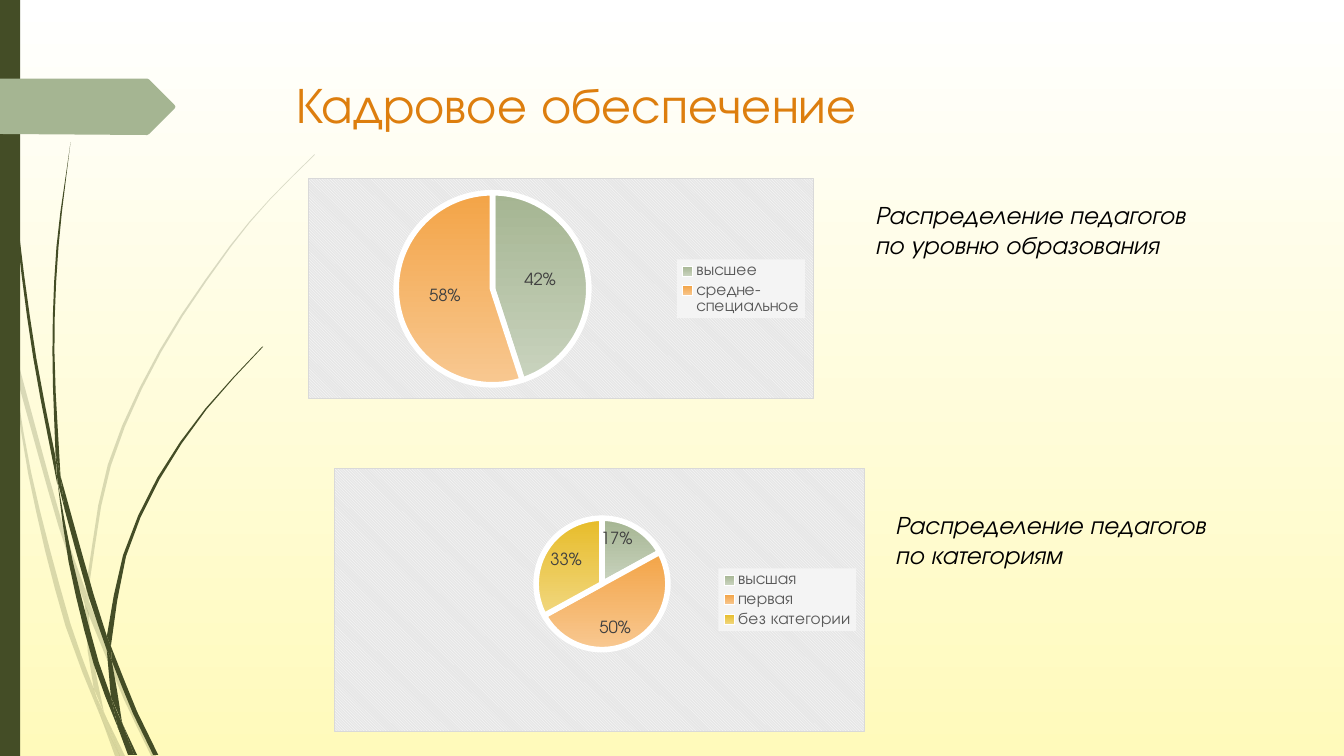
from dataclasses import dataclass
from math import ceil, dist
from typing import Optional

from lxml import etree
from pptx import Presentation
from pptx import util as u
from pptx.chart import data as chart_data
from pptx.dml.color import RGBColor
from pptx.enum import chart as chart_enum, shapes, text
from pptx.oxml import ns, parse_xml
from pptx.slide import Slide

Point = tuple[float, float]
Edge = list[Point]
UNITS = 1000  # freeform units per inch


@dataclass(frozen=True)
class Theme:
    font: str = "TeX Gyre Adventor"
    background: tuple[str, str] = ("FFFFFF", "FFFABB")
    olive: str = "444D26"
    sage: str = "A5B592"
    title: str = "DD7E0E"
    caption: str = "000000"
    legend: str = "595959"
    legend_fill: str = "F4F4F4"
    label: str = "404040"
    white: str = "FFFFFF"
    hatch: str = "E6E6E6"
    border: str = "D9D9D9"
    slices: tuple[tuple[str, str], ...] = (
        ("A5B592", "C9D3BE"), ("F3A447", "F8C891"), ("E7BC29", "F1D77F"))
    title_size: int = 36
    caption_size: int = 18
    chart_size: int = 12


THEME = Theme()


@dataclass(frozen=True)
class Box:
    left: float
    top: float
    width: float
    height: float

    def emu(self) -> tuple[u.Length, ...]:
        return tuple(u.Inches(v) for v in (self.left, self.top, self.width, self.height))


@dataclass(frozen=True)
class Blade:
    """A piece of a grass stem between two smooth edges."""
    out: Edge
    back: Edge


@dataclass(frozen=True)
class Caption:
    box: Box
    lines: tuple[str, ...]
    size: int = THEME.caption_size
    color: str = THEME.caption
    italic: bool = True


@dataclass(frozen=True)
class Pie:
    box: Box
    shares: dict[str, float]
    label_texts: tuple[str, ...] = ()
    plot: Optional[Box] = None


PALE_GRASS = [
    Blade([(.11, 3.5), (.09, 3.22), (0, 2.82)], [(0, 2.99), (.1, 3.44)]),
    Blade([(.17, 3.76), (.58, 5.22), (.84, 5.99)], [(.85, 5.86), (.62, 5.2), (.14, 3.45)]),
    Blade([(.88, 6.1), (1.23, 6.94), (1.5, 7.5)], [(1.55, 7.5), (1.27, 6.92), (.88, 5.96)]),
    Blade([(1.05, 7.11), (1.19, 7.5)], [(1.24, 7.5), (1.05, 7.11)]),
    Blade([(.11, 3.5), (.28, 4.7), (.65, 6.21), (1.01, 7.14)],
          [(.93, 6.83), (.7, 6.19), (.31, 4.69), (.11, 3.5)]),
    Blade([(.84, 5.99), (.87, 6.46), (.93, 6.83), (1.05, 7.11)],
          [(1.03, 7.06), (.91, 6.46), (.88, 6.08), (.84, 5.99)]),
    Blade([(.88, 5.96), (.88, 5.84), (1.1, 4.62), (1.6, 3.49), (2.29, 2.45), (2.68, 1.98), (3.12, 1.54)],
          [(3.12, 1.53), (2.68, 1.97), (2.28, 2.44), (1.58, 3.48), (1.07, 4.61), (.85, 5.84)]),
    Blade([(1.01, 7.14), (1.14, 7.5)], [(1.19, 7.5), (1.01, 7.14)]),
    Blade([(.84, 5.99), (.88, 6.1)], [(.88, 5.96), (.85, 5.86)]),
    Blade([(.93, 6.83), (1.01, 7.14), (1.19, 7.5)], [(1.19, 7.5), (1.05, 7.11), (.96, 6.92)]),
]
DARK_GRASS = [
    Blade([(.03, 0), (.07, 1.1), (.17, 2.33), (.33, 3.55), (.57, 4.81)],
          [(.55, 4.53), (.36, 3.55), (.19, 2.32), (.08, 1.09), (.04, 0)]),
    Blade([(.64, 5.05), (.88, 5.92), (1.06, 6.45)], [(1.06, 6.31), (.93, 5.9), (.6, 4.72)]),
    Blade([(1.11, 6.56), (1.32, 7.08), (1.52, 7.49)], [(1.57, 7.49), (1.36, 7.06), (1.1, 6.41)]),
    Blade([(.57, 4.77), (.68, 5.57), (.93, 6.59), (1.17, 7.22)],
          [(1.1, 6.91), (.98, 6.57), (.72, 5.56), (.57, 4.77)]),
    Blade([(.6, 4.72), (.54, 3.49), (.58, 2.45), (.7, 1.41)],
          [(.7, 1.41), (.56, 2.45), (.52, 3.49), (.55, 4.49)]),
    Blade([(1.22, 7.19), (1.33, 7.49)], [(1.36, 7.49), (1.22, 7.19)]),
    Blade([(.57, 4.77), (.64, 5.05)], [(.6, 4.72), (.55, 4.49)]),
    Blade([(1.1, 6.41), (1.25, 5.52), (1.58, 4.76), (2.05, 4.06), (2.61, 3.44)],
          [(2.6, 3.44), (2.04, 4.05), (1.56, 4.74), (1.22, 5.51), (1.06, 6.31)]),
    Blade([(1.17, 7.22), (1.27, 7.49)], [(1.31, 7.49), (1.17, 7.22)]),
    Blade([(1.06, 6.45), (1.1, 6.91), (1.22, 7.19)], [(1.21, 7.16), (1.11, 6.56), (1.06, 6.45)]),
    Blade([(1.06, 6.45), (1.11, 6.56)], [(1.1, 6.41), (1.06, 6.31)]),
    Blade([(1.1, 6.91), (1.17, 7.22), (1.3, 7.49)], [(1.33, 7.49), (1.22, 7.19), (1.16, 7.06)]),
]
TAG = [(0, .78), (1.46, .78), (1.48, .79), (1.73, 1.04), (1.74, 1.06),
       (1.73, 1.08), (1.48, 1.33), (1.46, 1.34), (0, 1.33)]

CAPTIONS = [
    Caption(Box(2.84, .68, 9.75, 1.4), ("Кадровое обеспечение",), THEME.title_size, THEME.title, False),
    Caption(Box(8.58, 1.93, 3.68, .71), ("Распределение педагогов", "по уровню образования")),
    Caption(Box(8.78, 5, 3.68, .71), ("Распределение педагогов", "по категориям")),
]
PIES = [
    Pie(Box(3.05, 1.77, 5.02, 2.19), {"высшее": 45, "средне-специальное": 55}, ("42%", "58%")),
    Pie(Box(3.31, 4.64, 5.27, 2.62), {"высшая": .17, "первая": .5, "без категории": .33},
        plot=Box(.1, .19, .81, .5)),
]


def rgb(color: str) -> RGBColor:
    return RGBColor.from_string(color)


def smooth(edge: Edge) -> Edge:
    """Sample a Hermite curve through the points, about every half inch."""
    def slope(i: int, axis: int) -> float:
        low, high = max(i - 1, 0), min(i + 1, len(edge) - 1)
        length = sum(dist(edge[k], edge[k + 1]) for k in range(low, high))
        return (edge[high][axis] - edge[low][axis]) / length

    points = [edge[0]]
    for i, (start, end) in enumerate(zip(edge, edge[1:])):
        chord = dist(start, end)
        steps = ceil(chord * 2) if len(edge) > 2 else 1
        for t in (step / steps for step in range(1, steps + 1)):
            points.append(tuple(
                (2 * t**3 - 3 * t**2 + 1) * start[axis] + (3 * t**2 - 2 * t**3) * end[axis]
                + chord * ((t**3 - 2 * t**2 + t) * slope(i, axis) + (t**3 - t**2) * slope(i + 1, axis))
                for axis in (0, 1)))
    return points


def paint(shape, color: str, alpha: int = 100) -> None:
    shape.shadow.inherit = False
    shape.fill.solid()
    shape.fill.fore_color.rgb = rgb(color)
    shape.line.fill.background()
    if alpha < 100:
        value = shape.element.spPr.find(f".//{ns.qn('a:srgbClr')}")
        etree.SubElement(value, ns.qn("a:alpha"), val=str(alpha * 1000))


def add_outline(slide: Slide, points: Edge, color: str, alpha: int = 100) -> None:
    units = [(round(x * UNITS), round(y * UNITS)) for x, y in points]
    builder = slide.shapes.build_freeform(*units[0], scale=u.Inches(1) / UNITS)
    builder.add_line_segments(units[1:], close=True)
    paint(builder.convert_to_shape(), color, alpha)


def set_gradient(fill, colors: tuple[str, str]) -> None:
    fill.gradient()
    fill.gradient_angle = 270  # top to bottom
    for stop, color in zip(fill.gradient_stops, colors):
        stop.color.rgb = rgb(color)


def set_font(font, size: int, color: str) -> None:
    font.name, font.size, font.color.rgb = THEME.font, u.Pt(size), rgb(color)


def add_caption(slide: Slide, caption: Caption) -> None:
    frame = slide.shapes.add_textbox(*caption.box.emu()).text_frame
    frame.word_wrap = True
    frame.vertical_anchor = text.MSO_ANCHOR.TOP
    for i, line in enumerate(caption.lines):
        paragraph = frame.add_paragraph() if i else frame.paragraphs[0]
        run = paragraph.add_run()
        run.text = line
        set_font(run.font, caption.size, caption.color)
        run.font.italic = caption.italic


def chart_properties(content: str):
    return parse_xml(f"<c:spPr {ns.nsdecls('c', 'a')}>{content}</c:spPr>")


def solid(color: str) -> str:
    return f'<a:solidFill><a:srgbClr val="{color}"/></a:solidFill>'


def add_pie(slide: Slide, pie: Pie) -> None:
    data = chart_data.CategoryChartData(number_format="0%" if pie.plot else "General")
    data.categories = list(pie.shares)
    data.add_series("Series 1", list(pie.shares.values()))
    chart = slide.shapes.add_chart(chart_enum.XL_CHART_TYPE.PIE, *pie.box.emu(), data).chart
    chart.has_title = False
    set_font(chart.font, 10, THEME.caption)

    # Hatched chart area and legend
    chart.element.find(ns.qn("c:chart")).addnext(chart_properties(
        f'<a:pattFill prst="dkDnDiag"><a:fgClr><a:srgbClr val="{THEME.white}"/></a:fgClr>'
        f'<a:bgClr><a:srgbClr val="{THEME.hatch}"/></a:bgClr></a:pattFill>'
        f'<a:ln w="9525">{solid(THEME.border)}</a:ln>'))
    chart.has_legend = True
    chart.legend.position = chart_enum.XL_LEGEND_POSITION.RIGHT
    chart.legend.include_in_layout = False
    set_font(chart.legend.font, THEME.chart_size, THEME.legend)
    legend = chart.element.find(f".//{ns.qn('c:legend')}")
    legend.find(ns.qn("c:txPr")).addprevious(chart_properties(solid(THEME.legend_fill)))

    # Slices and labels
    plot = chart.plots[0]
    plot.vary_by_categories = True
    series = plot.series[0]
    labels = series.data_labels
    labels.show_percentage, labels.show_value = not pie.plot, bool(pie.plot)
    labels.number_format, labels.number_format_is_linked = "0%", False
    position = chart_enum.XL_LABEL_POSITION
    labels.position = position.INSIDE_END if pie.plot else position.CENTER
    set_font(labels.font, THEME.chart_size, THEME.label)
    for i in range(len(pie.shares)):
        style = series.points[i].format
        set_gradient(style.fill, THEME.slices[i])
        style.line.color.rgb, style.line.width = rgb(THEME.white), u.Pt(4)
    for i, label_text in enumerate(pie.label_texts):
        label = series.points[i].data_label
        run = label.text_frame.paragraphs[0].add_run()
        run.text = label_text
        set_font(run.font, THEME.chart_size, THEME.label)
        label.position = position.CENTER

    # Fixed plot area
    if pie.plot:
        area = chart.element.find(f".//{ns.qn('c:plotArea')}")
        for old in area.findall(ns.qn("c:layout")):
            area.remove(old)
        sizes = zip("xywh", (pie.plot.left, pie.plot.top, pie.plot.width, pie.plot.height))
        area.insert(0, parse_xml(
            f'<c:layout {ns.nsdecls("c")}><c:manualLayout><c:layoutTarget val="inner"/>'
            '<c:xMode val="edge"/><c:yMode val="edge"/>'
            + "".join(f'<c:{key} val="{value}"/>' for key, value in sizes)
            + "</c:manualLayout></c:layout>"))


def main() -> None:
    presentation = Presentation()
    presentation.slide_width, presentation.slide_height = u.Inches(13.33), u.Inches(7.5)
    slide = presentation.slides.add_slide(presentation.slide_layouts[6])
    set_gradient(slide.background.fill, THEME.background)

    # Grass, side bar and tag
    for blades, alpha in ((PALE_GRASS, 20), (DARK_GRASS, 100)):
        for blade in blades:
            add_outline(slide, smooth(blade.out) + smooth(blade.back), THEME.olive, alpha)
    bar = slide.shapes.add_shape(shapes.MSO_SHAPE.RECTANGLE, *Box(0, 0, .2, 7.5).emu())
    paint(bar, THEME.olive)
    add_outline(slide, TAG, THEME.sage)

    # Title, captions and charts
    for caption in CAPTIONS:
        add_caption(slide, caption)
    for pie in PIES:
        add_pie(slide, pie)
    presentation.save("out.pptx")


if __name__ == "__main__":
    main()
